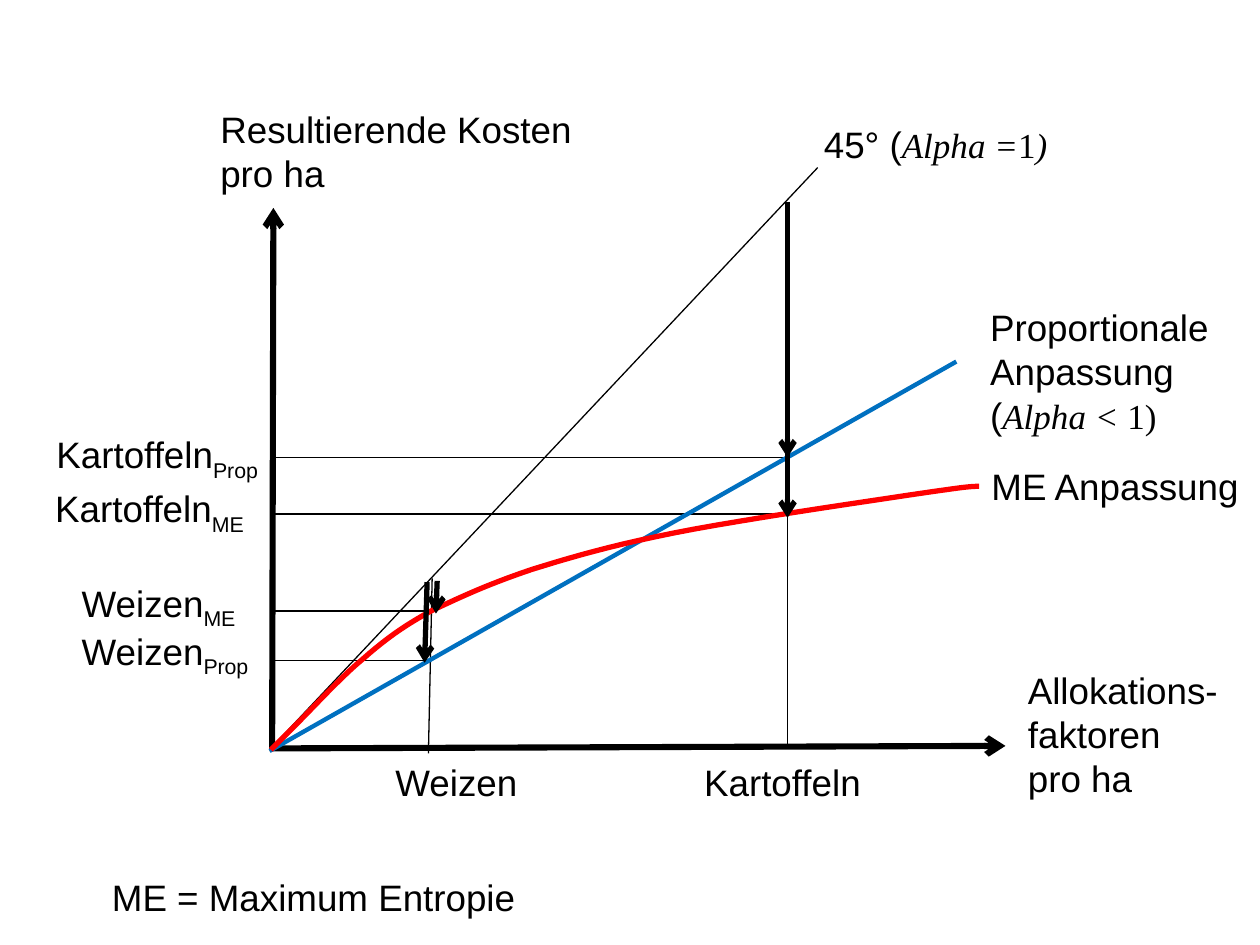
from lxml.etree import SubElement
from pptx import Presentation
from pptx.dml.color import RGBColor
from pptx.enum.shapes import MSO_CONNECTOR
from pptx.enum.text import MSO_AUTO_SIZE
from pptx.oxml.ns import qn
from pptx.util import Inches, Pt

BLACK, BLUE, RED = "000000", "0070C0", "FF0000"
THIN, BOLD, AXIS = 0.75, 3, 3.5

deck = Presentation()
deck.slide_width, deck.slide_height = Inches(10), Inches(7.5)
shapes = deck.slides.add_slide(deck.slide_layouts[6]).shapes


def line(start, end, width=THIN, color=BLACK, arrow=False):
    item = shapes.add_connector(
        MSO_CONNECTOR.STRAIGHT, *[Inches(v) for v in (*start, *end)])
    item.line.width = Pt(width)
    item.line.color.rgb = RGBColor.from_string(color)
    if arrow:
        SubElement(item.line._get_or_add_ln(), qn("a:tailEnd"), type="arrow")
    SubElement(item._element.spPr, qn("a:effectLst"))


def label(left, top, width, *parts, height=0.45):
    """Add a text box; each part is a (text, style) pair or a line break."""
    box = shapes.add_textbox(*[Inches(v) for v in (left, top, width, height)])
    frame = box.text_frame
    frame.word_wrap = True
    frame.auto_size = MSO_AUTO_SIZE.SHAPE_TO_FIT_TEXT
    para = frame.paragraphs[0]
    para.font.name, para.font.size = "Arial", Pt(21)
    para.font.color.rgb = RGBColor.from_string(BLACK)
    for part in parts:
        if part == "\n":
            para.add_line_break()
            continue
        text, style = part
        run = para.add_run()
        run.text = text
        if style == "sub":
            run.font._element.set("baseline", "-25000")
        elif style in ("italic", "roman"):
            run.font.name, run.font.size = "Times New Roman", Pt(20)
            run.font.italic = style == "italic"


# Positions of the two crops and their costs
wheat, potato = 3.42, 6.25
left, base = 2.16, 5.95
costs = [
    ("Kartoffeln", "Prop", 0.35, 3.38, 3.63, potato),
    ("Kartoffeln", "ME", 0.34, 3.81, 4.08, potato),
    ("Weizen", "ME", 0.55, 4.56, 4.85, wheat),
    ("Weizen", "Prop", 0.55, 4.94, 5.24, wheat),
]

# Guides and axes
line((3.4, 5.98), (3.43, 4.59))
line((potato, 5.91), (potato, 1.6))
line((2.14, 5.94), (7.98, 5.92), AXIS, arrow=True)
line((left, base), (2.17, 1.65), AXIS, arrow=True)
for crop, method, x, y, cost, end in costs:
    line((left, cost), (end, cost))
    label(x, y, 2.03, (crop, "plain"), (method, "sub"))

# Straight cost lines
line((2.14, base), (6.49, 1.33))
line((2.14, 5.96), (7.59, 2.87), 2.5, BLUE)

# Entropy curve: a straight start, then cubic pieces sampled in equal steps
curve = [(2.15, 5.95), (2.38, 5.72)]
pieces = [
    ((2.5, 5.6), (2.71, 5.37), (2.88, 5.23)),
    ((3.05, 5.08), (3.2, 4.97), (3.42, 4.85)),
    ((3.65, 4.74), (3.89, 4.63), (4.22, 4.52)),
    ((4.54, 4.42), (4.85, 4.33), (5.35, 4.23)),
    ((5.85, 4.13), (6.81, 3.99), (7.21, 3.93)),
    ((7.62, 3.87), (7.69, 3.86), (7.77, 3.86)),
]
steps = 10
for piece in pieces:
    knots = (curve[-1], *piece)
    for step in range(1, steps + 1):
        t = step / steps
        shares = ((1 - t) ** 3, 3 * t * (1 - t) ** 2, 3 * t * t * (1 - t), t ** 3)
        curve.append(tuple(sum(s * k[axis] for s, k in zip(shares, knots))
                           for axis in (0, 1)))
# The builder rounds to whole units, so points go in as EMU
dots = [(Inches(x), Inches(y)) for x, y in curve]
pen = shapes.build_freeform(*dots[0])
pen.add_line_segments(dots[1:], close=False)
bend = pen.convert_to_shape()
bend.shadow.inherit = False
bend.fill.background()
bend.line.width = Pt(3)
bend.line.color.rgb = RGBColor.from_string(RED)

# Arrows from the 45° line down to each method
for start, end in [
    ((potato, 1.6), (potato, 3.63)),
    ((potato, 1.63), (potato, 4.11)),
    ((3.39, 4.62), (3.37, 5.26)),
    ((3.47, 4.61), (3.46, 4.87)),
]:
    line(start, end, BOLD, arrow=True)

# Labels of axes, crops and lines
label(1.65, 0.8, 3.31, ("Resultierende Kosten pro ha", "plain"), height=0.81)
label(8.06, 5.25, 2.16, ("Allokations-faktoren", "plain"), "\n",
      ("pro ha", "plain"), height=1.16)
label(3.04, 5.98, 1.53, ("Weizen", "plain"))
label(5.49, 5.98, 1.89, ("Kartoffeln", "plain"))
label(6.44, 0.92, 2.24, ("45° (", "plain"), ("Alpha =", "italic"),
      ("1", "roman"), (")", "italic"))
label(7.76, 2.37, 2.24, ("Proportionale Anpassung", "plain"), "\n",
      ("(", "plain"), ("Alpha < ", "italic"), ("1)", "roman"), height=1.16)
label(7.77, 3.63, 2.79, ("ME Anpassung", "plain"))
label(0.79, 6.89, 4.09, ("ME = Maximum Entropie", "plain"))

deck.save("out.pptx")
